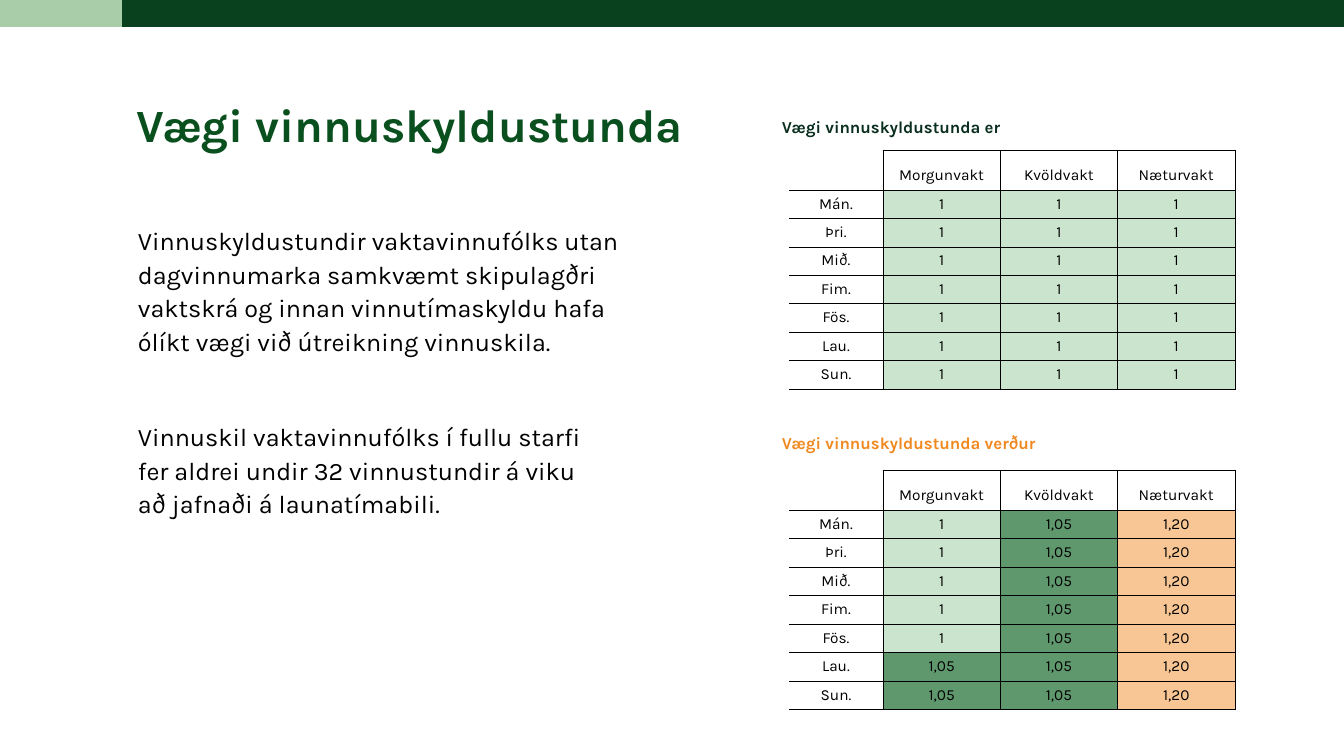
from dataclasses import dataclass

from lxml.etree import SubElement
from pptx import Presentation
from pptx.dml.color import RGBColor
from pptx.enum.shapes import MSO_SHAPE
from pptx.enum.text import MSO_ANCHOR, PP_ALIGN
from pptx.oxml.ns import qn
from pptx.util import Pt

WIDTH, HEIGHT = 1344, 756
EMU_PER_PX = 12192000 / WIDTH


@dataclass(frozen=True)
class Theme:
    font: str = "Karla"
    black: str = "000000"
    bar: str = "09411E"
    bar_accent: str = "A9CCA9"
    title: str = "09501E"
    now: str = "092E1E"
    future: str = "F18921"
    low: str = "CBE4CE"
    middle: str = "60986E"
    high: str = "F8C694"
    title_size: int = 33
    body_size: int = 18
    caption_size: int = 12
    cell_size: int = 11


THEME = Theme()
SHIFTS = ["Morgunvakt", "Kvöldvakt", "Næturvakt"]
DAYS = ["Mán.", "Þri.", "Mið.", "Fim.", "Fös.", "Lau.", "Sun."]
WEIGHT_FILLS = {"1": THEME.low, "1,05": THEME.middle, "1,20": THEME.high}
WEIGHTS_NOW = [["1"] * 3 for day in DAYS]
WEIGHTS_FUTURE = [["1", "1,05", "1,20"]] * 5 + [["1,05", "1,05", "1,20"]] * 2
BODY = [
    "Vinnuskyldustundir vaktavinnufólks utan dagvinnumarka samkvæmt skipulagðri "
    "vaktskrá og innan vinnutímaskyldu hafa ólíkt vægi við útreikning vinnuskila.",
    "Vinnuskil vaktavinnufólks í fullu starfi \vfer aldrei undir 32 vinnustundir "
    "á viku \vað jafnaði á launatímabili.",
]


def px(value):
    return round(value * EMU_PER_PX)


def set_attrs(obj, values):
    for name, value in values.items():
        setattr(obj, name, value)


def write(p, text, size, color, bold=False, **layout):
    p.text = text
    set_attrs(p, layout)
    for r in p.runs:
        set_attrs(r.font, {"name": THEME.font, "size": Pt(size), "bold": bold})
        r.font.color.rgb = RGBColor.from_string(color)


def add_bars(slide, box, accent_width):
    x, y, w, h = box
    bars = [(x + accent_width, w - accent_width, THEME.bar), (x, accent_width, THEME.bar_accent)]
    for left, width, color in bars:
        sp = slide.shapes.add_shape(MSO_SHAPE.RECTANGLE, px(left), px(y), px(width), px(h))
        sp.shadow.inherit = False
        sp.fill.solid()
        sp.fill.fore_color.rgb = RGBColor.from_string(color)
        sp.line.fill.background()


def add_title(slide, box, text):
    sp = slide.shapes.title
    set_attrs(sp, dict(zip(("left", "top", "width", "height"), map(px, box))))
    tf = sp.text_frame
    set_attrs(tf, {"word_wrap": True, "vertical_anchor": MSO_ANCHOR.TOP})
    write(tf.paragraphs[0], text, THEME.title_size, THEME.title, True,
          alignment=PP_ALIGN.LEFT, line_spacing=0.9, space_before=Pt(0))


def add_text(slide, box):
    tf = slide.shapes.add_textbox(*map(px, box)).text_frame
    tf.word_wrap = True
    return tf


def add_body(slide, box, texts):
    tf = add_text(slide, box)
    for i, text in enumerate(texts):
        p = tf.add_paragraph() if i else tf.paragraphs[0]
        write(p, text, THEME.body_size, THEME.black,
              line_spacing=Pt(24), space_before=Pt(44 if i else 0))


def set_borders(cell, widths):
    tc_pr = cell._tc.get_or_add_tcPr()
    for i, side in enumerate("LRTB"):
        ln = SubElement(tc_pr, qn(f"a:ln{side}"), w=str(Pt(widths[side])))
        if widths[side]:
            fill = SubElement(ln, qn("a:solidFill"))
            SubElement(fill, qn("a:srgbClr"), val=THEME.black)
        else:
            SubElement(ln, qn("a:noFill"))
        tc_pr.insert(i, ln)


def fill_cell(cell, row, col, text):
    header = row == 0
    inset = px(0 if not text else 6 if header else 5)
    set_attrs(cell, {f"margin_{side}": inset for side in ("left", "right", "top", "bottom")})
    cell.vertical_anchor = MSO_ANCHOR.BOTTOM if header else MSO_ANCHOR.TOP
    if text:
        write(cell.text_frame.paragraphs[0], text, THEME.cell_size, THEME.black,
              alignment=PP_ALIGN.CENTER, line_spacing=Pt(10) if header else None)
    if text in WEIGHT_FILLS:
        cell.fill.solid()
        cell.fill.fore_color.rgb = RGBColor.from_string(WEIGHT_FILLS[text])
    else:
        cell.fill.background()
    set_borders(cell, {
        "L": 0.5 if col else 0,
        "R": 0.5,
        "T": 0.5 if row or col else 0,
        "B": 1 if row == len(DAYS) else 0.5,
    })


def add_weight_table(slide, box, weights):
    x, y, w, h = box
    day_width, header_height = 94, 40
    rows = [["", *SHIFTS]] + [[day, *values] for day, values in zip(DAYS, weights)]
    table = slide.shapes.add_table(len(rows), len(rows[0]), *map(px, box)).table
    set_attrs(table, {"first_row": False, "horz_banding": False})
    for i, column in enumerate(table.columns):
        column.width = px((w - day_width) / len(SHIFTS) if i else day_width)
    for i, row in enumerate(table.rows):
        row.height = px((h - header_height) / len(DAYS) if i else header_height)
    for i, texts in enumerate(rows):
        for j, text in enumerate(texts):
            fill_cell(table.cell(i, j), i, j, text)


def add_weight_panel(slide, box, caption, color, table_offset, weights):
    x, y, w, h = box
    tf = add_text(slide, (x, y, w, 30))
    write(tf.paragraphs[0], caption, THEME.caption_size, color, True)
    add_weight_table(slide, (x + 17, y + table_offset, w - 17, h - table_offset), weights)


def build_slide(prs):
    slide = prs.slides.add_slide(prs.slide_layouts[5])
    add_bars(slide, (0, 0, WIDTH, 27), 122)
    add_title(slide, (126, 98, 602, 87), "Vægi vinnuskyldustunda")
    add_body(slide, (128, 217, 533, 506), BODY)
    add_weight_panel(slide, (772, 112, 463, 274), "Vægi vinnuskyldustunda er",
                     THEME.now, 38, WEIGHTS_NOW)
    add_weight_panel(slide, (772, 428, 463, 282), "Vægi vinnuskyldustunda verður",
                     THEME.future, 42, WEIGHTS_FUTURE)


def main():
    prs = Presentation()
    set_attrs(prs, {"slide_width": px(WIDTH), "slide_height": px(HEIGHT)})
    build_slide(prs)
    prs.save("out.pptx")


if __name__ == "__main__":
    main()
